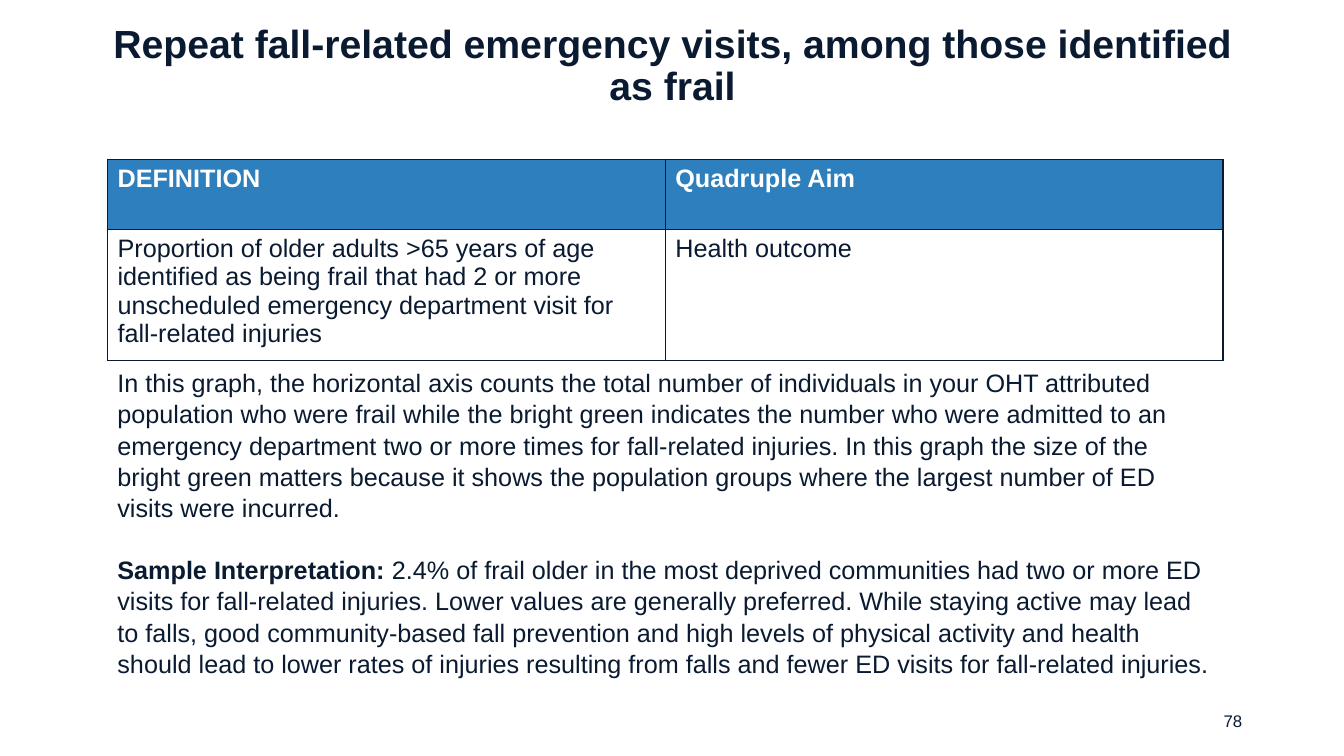
from lxml import etree
from pptx import Presentation
from pptx.dml.color import RGBColor
from pptx.enum.text import MSO_ANCHOR, PP_ALIGN
from pptx.oxml.ns import qn
from pptx.util import Inches, Pt

TOP, MIDDLE = MSO_ANCHOR.TOP, MSO_ANCHOR.MIDDLE
LEFT, CENTER, RIGHT = PP_ALIGN.LEFT, PP_ALIGN.CENTER, PP_ALIGN.RIGHT
WIDE, HIGH = 13.33, 7.5
COLORS = {"ink": "0A1A31", "head": "2D80BD", "paper": "FFFFFF"}

TITLE = "Repeat fall-related emergency visits, among those identified as frail"
ROWS = [
    ["DEFINITION", "Quadruple Aim"],
    ["Proportion of older adults >65 years of age identified as being frail "
     "that had 2 or more unscheduled emergency department visit for "
     "fall-related injuries", "Health outcome"],
]
GRAPH = (
    "In this graph, the horizontal axis counts the total number of individuals "
    "in your OHT attributed population who were frail while the bright green "
    "indicates the number who were admitted to an emergency department two or "
    "more times for fall-related injuries. In this graph the size of "
    "the bright green matters because it shows the population groups where "
    "the largest number of ED visits were incurred."
)
SAMPLE = (
    "2.4% of frail older in the most deprived communities had two or more ED "
    "visits for fall-related injuries. Lower values are generally preferred. "
    "While staying active may lead to falls, good community-based fall "
    "prevention and high levels of physical activity and health should lead to "
    "lower rates of injuries resulting from falls and fewer ED visits for "
    "fall-related injuries."
)


def color(name):
    return RGBColor.from_string(COLORS[name])


def style(item, **values):
    for key, value in values.items():
        setattr(item, key, value)


def write(para, runs, size, ink="ink", **form):
    style(para, **form)
    for text, bold in runs:
        run = para.add_run()
        run.text = text
        style(run.font, name="Arial", size=Pt(size), bold=bold)
        run.font.color.rgb = color(ink)


def add_box(slide, box, anchor):
    frame = slide.shapes.add_textbox(*map(Inches, box)).text_frame
    style(frame, word_wrap=True, vertical_anchor=anchor)
    return frame


def add_title(slide, box):
    frame = add_box(slide, box, MIDDLE)
    write(frame.paragraphs[0], [(TITLE, True)], 28,
          alignment=CENTER, line_spacing=0.9)


def add_edges(cell):
    props = cell._tc.get_or_add_tcPr()
    for place, side in enumerate(("lnL", "lnR", "lnT", "lnB")):
        line = etree.Element(qn(f"a:{side}"), w=str(Pt(1)))
        fill = etree.SubElement(line, qn("a:solidFill"))
        etree.SubElement(fill, qn("a:srgbClr"), val=COLORS["ink"])
        props.insert(place, line)


def add_grid(slide, box, shares):
    count = len(ROWS[0])
    table = slide.shapes.add_table(len(ROWS), count, *map(Inches, box)).table
    for column in table.columns:
        column.width = Inches(box[2] / count)
    for r, (texts, share) in enumerate(zip(ROWS, shares)):
        head = r == 0
        table.rows[r].height = Inches(box[3] * share)
        for c, text in enumerate(texts):
            cell = table.cell(r, c)
            cell.fill.solid()
            cell.fill.fore_color.rgb = color("head" if head else "paper")
            add_edges(cell)
            write(cell.text_frame.paragraphs[0], [(text, head)], 18,
                  "paper" if head else "ink")


def add_body(slide, box):
    frame = add_box(slide, box, TOP)
    form = {"alignment": LEFT, "line_spacing": 1.04}
    write(frame.paragraphs[0], [(GRAPH, False)], 18, **form)
    write(frame.add_paragraph(),
          [("Sample Interpretation: ", True), (SAMPLE, False)], 18,
          space_before=Pt(21.6), **form)


def add_number(slide, box):
    frame = add_box(slide, box, MIDDLE)
    write(frame.paragraphs[0], [("78", False)], 12, alignment=RIGHT)


def main():
    deck = Presentation()
    style(deck, slide_width=Inches(WIDE), slide_height=Inches(HIGH))
    slide = deck.slides.add_slide(deck.slide_layouts[6])
    side, span = WIDE * 0.08, WIDE * 0.83
    top, tall = 1.58, 2
    add_number(slide, (9.42, 6.95, 3, 0.4))
    add_title(slide, (0.77, 0.24, 11.8, 0.84))
    add_grid(slide, (side, top, span, tall), (0.35, 0.65))
    add_body(slide, (side, top + tall, span, 3.43))
    deck.save("out.pptx")


if __name__ == "__main__":
    main()
